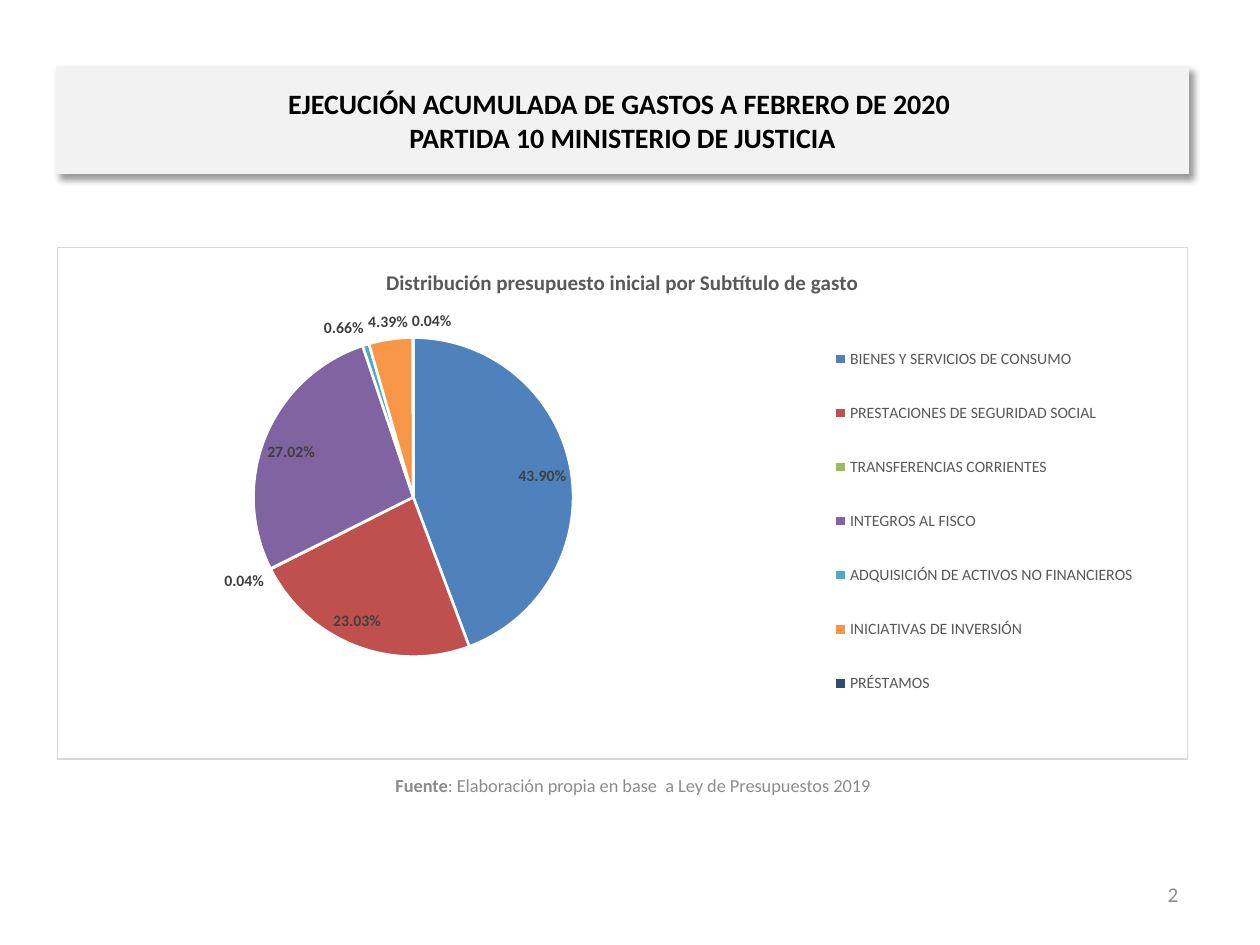
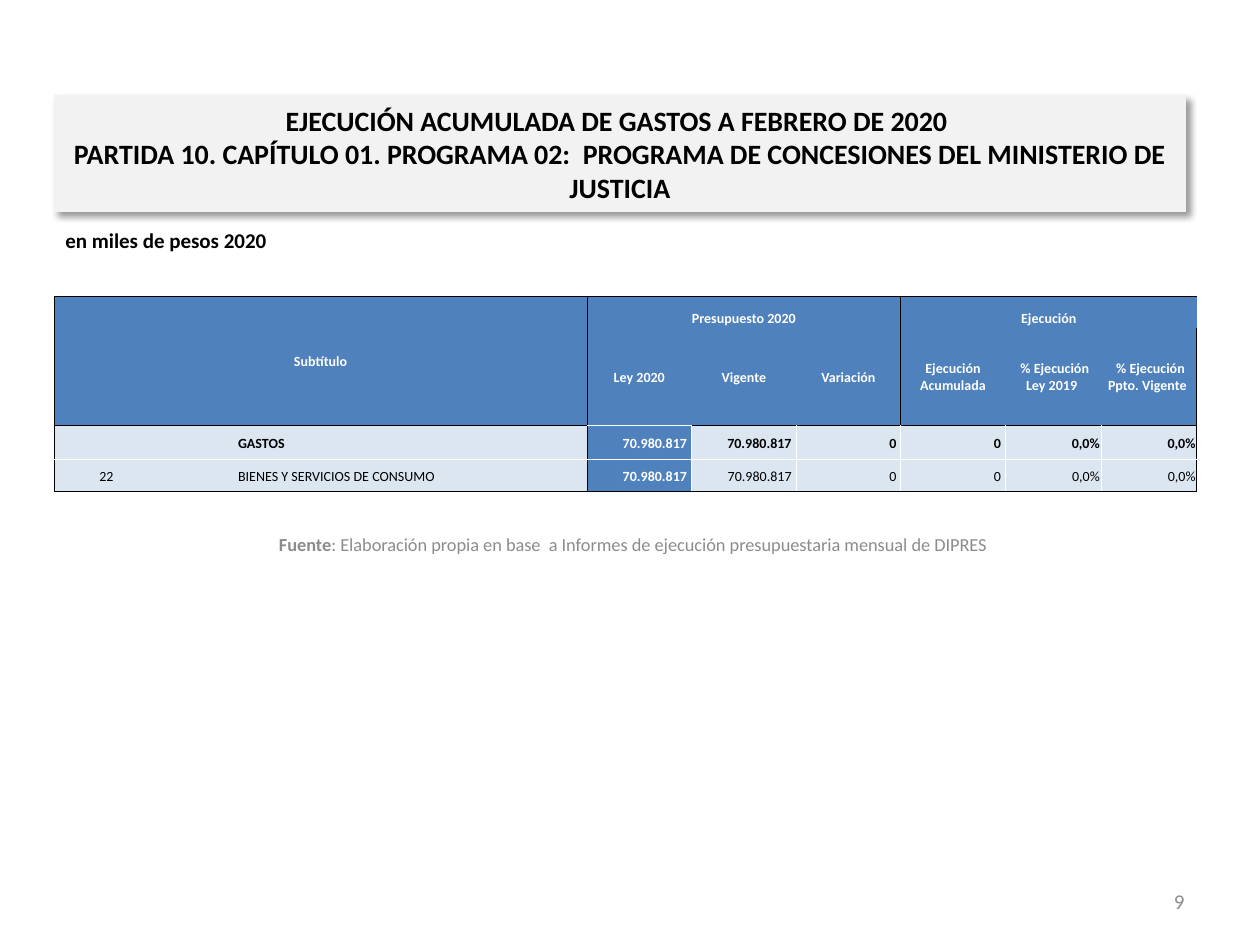
from lxml import etree
from pptx import Presentation
from pptx.chart.data import CategoryChartData
from pptx.dml.color import RGBColor
from pptx.enum import chart as charts, text
from pptx.oxml import parse_xml
from pptx.oxml.ns import nsdecls, qn
from pptx.util import Inches, Pt

FONT = "Calibri"
BLACK, WHITE, GREY = "000000", "FFFFFF", "8C8C8C"
BAND, BLUE, PALE_BLUE = "F2F2F2", "4F81BD", "DCE6F1"
TITLE_START = "EJECUCIÓN ACUMULADA DE GASTOS A FEBRERO DE 2020 \v"
LEFT, CENTER, RIGHT = text.PP_ALIGN.LEFT, text.PP_ALIGN.CENTER, text.PP_ALIGN.RIGHT
JUSTIFY = text.PP_ALIGN.JUSTIFY
MIDDLE, BOTTOM = text.MSO_ANCHOR.MIDDLE, text.MSO_ANCHOR.BOTTOM

SPENDING = [
    ("BIENES Y SERVICIOS DE CONSUMO", 0.439, BLUE),
    ("PRESTACIONES DE SEGURIDAD SOCIAL", 0.2303, "C0504D"),
    ("TRANSFERENCIAS CORRIENTES", 0.0004, "9BBB59"),
    ("INTEGROS AL FISCO", 0.2702, "8064A2"),
    ("ADQUISICIÓN DE ACTIVOS NO FINANCIEROS", 0.0066, "4BACC6"),
    ("INICIATIVAS DE INVERSIÓN", 0.0439, "F79646"),
    ("PRÉSTAMOS", 0.0004, "2C4D75"),
]

COLUMN_WIDTHS = [0.83, 0.31, 0.31, 2.78, 0.83, 0.83, 0.83, 0.83, 0.76, 0.76]
ROW_HEIGHTS = [0.25, 0.78, 0.27, 0.25]
BUDGET_ROWS = [
    ["Subtítulo", "", "", "", "Presupuesto 2020", "", "", "Ejecución", "", ""],
    ["", "", "", "", "Ley 2020", "Vigente", "Variación", "Ejecución Acumulada",
     " % Ejecución Ley 2019 ", " % Ejecución Ppto. Vigente "],
    ["", "", "", "GASTOS", "70.980.817 ", "70.980.817 ", "0 ", "0 ", "0,0%", "0,0%"],
    ["22", "", "", "BIENES Y SERVICIOS DE CONSUMO", "70.980.817 ", "70.980.817 ",
     "0 ", "0 ", "0,0%", "0,0%"],
]
LAW_COLUMN = 4  # first column of the budget group, highlighted in the body


def rgb(color):
    return RGBColor.from_string(color)


def style_font(font, size, color, bold=False):
    font.name, font.size, font.bold = FONT, Pt(size), bold
    font.color.rgb = rgb(color)


# Elements shared by the slides
def add_title(slide, title, left, top, height):
    shape = slide.shapes.title
    shape.left, shape.top = Inches(left), Inches(top)
    shape.width, shape.height = Inches(8.98), Inches(height)
    shape.fill.solid()
    shape.fill.fore_color.rgb = rgb(BAND)
    shape.line.color.rgb = rgb(BAND)
    shape.line.width = Pt(0.75)
    shape._element.spPr.append(parse_xml(
        f'<a:effectLst {nsdecls("a")}><a:outerShdw blurRad="{Pt(4)}" dist="{Pt(3)}" '
        f'dir="2700000" algn="tl" rotWithShape="0"><a:srgbClr val="{BLACK}">'
        '<a:alpha val="40000"/></a:srgbClr></a:outerShdw></a:effectLst>'))
    frame = shape.text_frame
    frame.text = TITLE_START + title
    frame.auto_size = text.MSO_AUTO_SIZE.NONE
    frame.word_wrap = True
    frame.vertical_anchor = MIDDLE
    frame.margin_left = frame.margin_right = Inches(0.11)
    frame.margin_top = frame.margin_bottom = Inches(0.05)
    paragraph = frame.paragraphs[0]
    paragraph.alignment = CENTER
    style_font(paragraph.font, 16, BLACK, True)


def add_text(slide, box, words, size, color, align=LEFT, bold=False, anchor=MIDDLE):
    frame = slide.shapes.add_textbox(*map(Inches, box)).text_frame
    frame.word_wrap = True
    frame.vertical_anchor = anchor
    paragraph = frame.paragraphs[0]
    paragraph.alignment = align
    style_font(paragraph.font, size, color, bold)
    paragraph.add_run().text = words
    return paragraph


def add_source(slide, top, words):
    paragraph = add_text(slide, (0.43, top, 9.19, 0.4), "Fuente", 10.5, GREY, CENTER)
    paragraph.runs[0].font.bold = True
    paragraph.add_run().text = ": Elaboración propia en base  a " + words


def add_page_number(slide, left, top, number):
    add_text(slide, (left, top, 2.33, 0.4), number, 12, GREY, RIGHT)


# Pie chart
def manual_layout(x, y, width, height, inner=False):
    target = '<c:layoutTarget val="inner"/>' if inner else ""
    return parse_xml(
        f'<c:layout {nsdecls("c")}><c:manualLayout>{target}'
        '<c:xMode val="edge"/><c:yMode val="edge"/>'
        f'<c:x val="{x}"/><c:y val="{y}"/><c:w val="{width}"/><c:h val="{height}"/>'
        '</c:manualLayout></c:layout>')


def drop_layout(element):
    for layout in element.findall(qn("c:layout")):
        element.remove(layout)


def add_spending_pie(slide):
    names, shares, colors = zip(*SPENDING)
    data = CategoryChartData(number_format="0.00%")
    data.categories = names
    data.add_series("Series 1", shares)
    box = map(Inches, (0.45, 1.96, 8.98, 4.07))
    chart = slide.shapes.add_chart(charts.XL_CHART_TYPE.PIE, *box, data).chart
    style_font(chart.font, 10, BLACK)

    chart.has_title = True
    chart.chart_title.include_in_layout = False
    title = chart.chart_title.text_frame
    title.text = "Distribución presupuesto inicial por Subtítulo de gasto"
    style_font(title.paragraphs[0].font, 12, "595959", True)

    plot = chart.plots[0]
    plot.vary_by_categories = True
    for index, color in enumerate(colors):
        slice_format = plot.series[0].points[index].format
        slice_format.fill.solid()
        slice_format.fill.fore_color.rgb = rgb(color)
        slice_format.line.color.rgb = rgb(WHITE)
        slice_format.line.width = Pt(1.5)

    plot.has_data_labels = True
    labels = plot.data_labels
    labels.show_value = True
    labels.show_percentage = False
    labels.number_format = "0.00%"
    labels.number_format_is_linked = False
    labels.position = charts.XL_LABEL_POSITION.BEST_FIT
    style_font(labels.font, 9, "404040", True)

    chart.has_legend = True
    legend = chart.legend
    legend.position = charts.XL_LEGEND_POSITION.RIGHT
    legend.include_in_layout = False
    style_font(legend.font, 9, "595959")

    # Fixed places for plot and legend, then the chart frame
    chart_space = chart._chartSpace
    plot_area = chart_space.find(".//" + qn("c:plotArea"))
    drop_layout(plot_area)
    plot_area.insert(0, manual_layout(0.062, 0.176, 0.506, 0.624, inner=True))
    legend_element = chart_space.find(".//" + qn("c:legend"))
    drop_layout(legend_element)
    legend_element.find(qn("c:legendPos")).addnext(manual_layout(0.68, 0.13, 0.28, 0.81))
    chart_space.find(qn("c:chart")).addnext(parse_xml(
        f'<c:spPr {nsdecls("c", "a")}>'
        f'<a:solidFill><a:srgbClr val="{WHITE}"/></a:solidFill>'
        f'<a:ln w="{Pt(0.75)}"><a:solidFill><a:srgbClr val="D9D9D9"/></a:solidFill></a:ln>'
        '</c:spPr>'))


# Budget table
def cell_borders(row, column):
    """Black frame and group edges; white rules between body values."""
    header = row < 2
    inner = None if header or column < LAW_COLUMN else WHITE
    header_edge = WHITE if column == LAW_COLUMN else BLACK
    starts_group = column in (0, LAW_COLUMN) or (header and column == 7)
    ends_group = column in (3, 9) or (header and column == 6)
    return {
        "L": BLACK if starts_group else inner,
        "R": BLACK if ends_group else inner,
        "T": (BLACK, None, header_edge, WHITE)[row],
        "B": (None, header_edge, WHITE, BLACK)[row],
    }


def set_borders(cell, borders):
    properties = cell._tc.get_or_add_tcPr()
    for side, color in borders.items():
        line = etree.SubElement(properties, qn("a:ln" + side), w=str(Pt(0.5)))
        if color:
            fill = etree.SubElement(line, qn("a:solidFill"))
            etree.SubElement(fill, qn("a:srgbClr"), val=color)
        else:
            etree.SubElement(line, qn("a:noFill"))


def fill_cell(cell, row, column, words):
    header = row < 2
    highlighted = header or column == LAW_COLUMN
    set_borders(cell, cell_borders(row, column))
    cell.fill.solid()
    cell.fill.fore_color.rgb = rgb(BLUE if highlighted else PALE_BLUE)
    cell.margin_left = cell.margin_right = cell.margin_top = Inches(0.01)
    cell.margin_bottom = 0
    cell.vertical_anchor = BOTTOM if row == 0 and column else MIDDLE
    paragraph = cell.text_frame.paragraphs[0]
    if not words:
        etree.SubElement(paragraph._p, qn("a:endParaRPr"), sz="800")
        return
    paragraph.add_run().text = words
    if header or column == 0:
        paragraph.alignment = CENTER
    else:
        paragraph.alignment = JUSTIFY if column == 3 else RIGHT
    style_font(paragraph.font, 8, WHITE if highlighted else BLACK, highlighted or row == 2)


def add_budget_table(slide):
    size = sum(COLUMN_WIDTHS), sum(ROW_HEIGHTS)
    table = slide.shapes.add_table(len(ROW_HEIGHTS), len(COLUMN_WIDTHS), Inches(0.43),
                                   Inches(2.35), *map(Inches, size)).table
    table.first_row = table.horz_banding = False
    for column, width in zip(table.columns, COLUMN_WIDTHS):
        column.width = Inches(width)
    for row, height in zip(table.rows, ROW_HEIGHTS):
        row.height = Inches(height)
    for first, last in (((0, 0), (1, 3)), ((0, 4), (0, 6)), ((0, 7), (0, 9))):
        table.cell(*first).merge(table.cell(*last))
    for row, values in enumerate(BUDGET_ROWS):
        for column, words in enumerate(values):
            fill_cell(table.cell(row, column), row, column, words)


# Slides
def build_distribution_slide(slide):
    add_title(slide, "PARTIDA 10 MINISTERIO DE JUSTICIA", 0.45, 0.53, 0.85)
    add_spending_pie(slide)
    add_source(slide, 6.03, "Ley de Presupuestos 2019")
    add_page_number(slide, 7.12, 6.9, "2")


def build_concessions_slide(slide):
    add_title(slide, "PARTIDA 10. CAPÍTULO 01. PROGRAMA 02:  PROGRAMA DE CONCESIONES "
              "DEL MINISTERIO DE JUSTICIA", 0.43, 0.76, 0.92)
    add_text(slide, (0.42, 1.76, 9, 0.34), "en miles de pesos 2020", 12, BLACK,
             bold=True, anchor=text.MSO_ANCHOR.TOP)
    add_budget_table(slide)
    add_source(slide, 4.12, "Informes de ejecución presupuestaria mensual de DIPRES")
    add_page_number(slide, 7.17, 6.95, "9")


def main():
    presentation = Presentation()
    presentation.slide_width, presentation.slide_height = Inches(10), Inches(7.5)
    title_only = presentation.slide_layouts[5]
    for build in (build_distribution_slide, build_concessions_slide):
        build(presentation.slides.add_slide(title_only))
    presentation.save("out.pptx")


if __name__ == "__main__":
    main()
